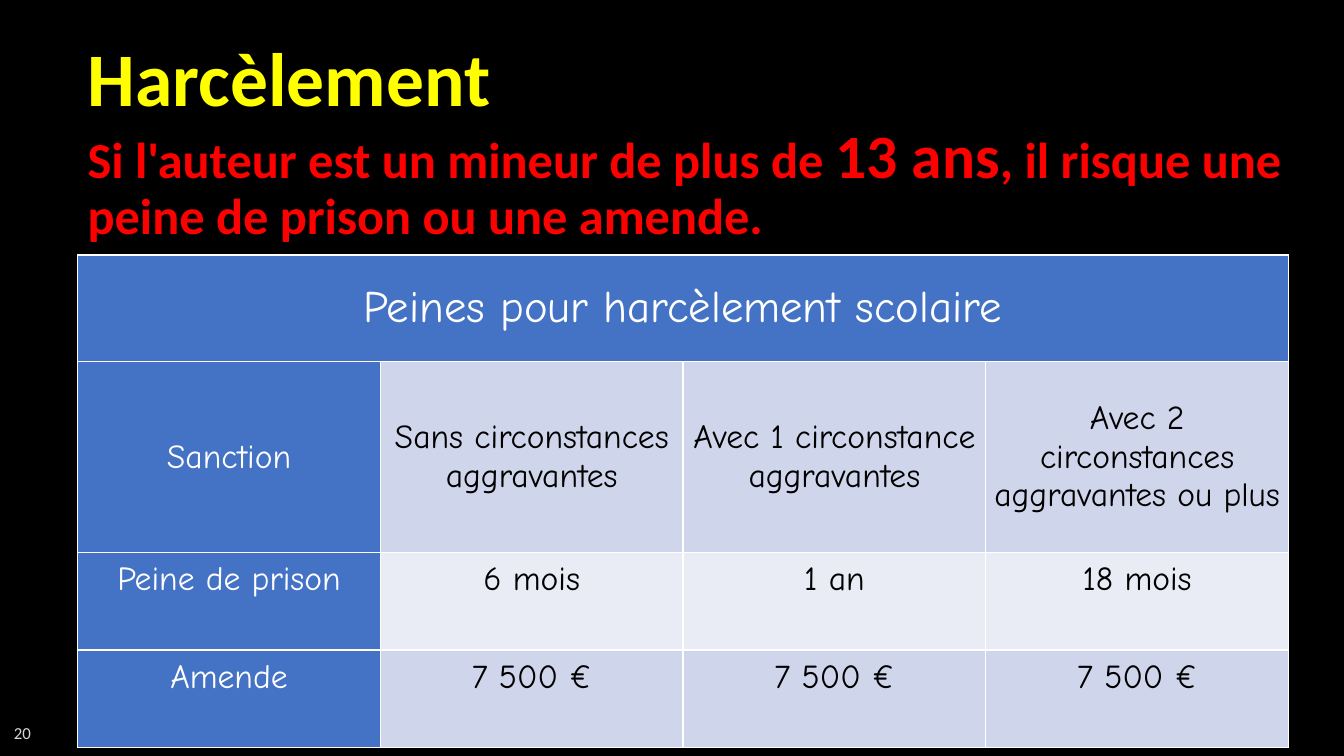
from lxml import etree
from pptx import Presentation
from pptx.dml.color import RGBColor
from pptx.enum.shapes import MSO_SHAPE
from pptx.enum.text import MSO_ANCHOR, PP_ALIGN
from pptx.oxml.ns import qn
from pptx.util import Inches, Pt

RECT = MSO_SHAPE.RECTANGLE
TOP, MIDDLE = MSO_ANCHOR.TOP, MSO_ANCHOR.MIDDLE
LEFT, CENTER, JUSTIFY = PP_ALIGN.LEFT, PP_ALIGN.CENTER, PP_ALIGN.JUSTIFY

TITLE = "Harcèlement"
RULE = [
    ("Si l'auteur est un mineur de plus de ", "rule"),
    ("13 ans", "age"),
    (", il risque une peine de prison ou une amende.", "rule"),
]
TABLE_TITLE = "Peines pour harcèlement scolaire"
PENALTIES = [
    ("Sanction", "Sans circonstances aggravantes", "Avec 1 circonstance aggravantes",
     "Avec 2 circonstances aggravantes ou plus"),
    ("Peine de prison", "6 mois", "1 an", "18 mois"),
    ("Amende", "7 500 €", "7 500 €", "7 500 €"),
]
PAGE = "20"


class Theme:
    background = "000000"
    header = "4472C4"
    bands = ("CFD5EA", "E9EBF5")
    border = "FFFFFF"
    styles = {
        "title": ("Calibri", 54, "FFFF00", True),
        "rule": ("Calibri", 36, "FF0000", True),
        "age": ("Calibri", 44, "FF0000", True),
        "table title": ("Comic Neue", 32, "FFFFFF", False),
        "head": ("Comic Neue", 24, "FFFFFF", False),
        "value": ("Comic Neue", 24, "000000", False),
        "page": ("Calibri", 12, "D9D9D9", False),
    }


LEFT_EDGE = 0.77
TABLE_TOP, TABLE_WIDTH = 2.53, 12.01
ROW_HEIGHTS = (1.06, 1.89, 0.97, 0.97)
CELL_MARGIN = 0.08


def place(left, top, width, height):
    return [Inches(v) for v in (left, top, width, height)]


def paint(fill, color):
    fill.solid()
    fill.fore_color.rgb = RGBColor.from_string(color)


def write(tf, runs, align=LEFT, anchor=TOP, line=1.0, after=0):
    tf.word_wrap = True
    tf.vertical_anchor = anchor
    p = tf.paragraphs[0]
    p.alignment = align
    p.line_spacing = line
    p.space_before = Pt(0)
    p.space_after = Pt(after)
    for text, style in runs:
        r = p.add_run()
        r.text = text
        r.font.name, size, color, r.font.bold = Theme.styles[style]
        r.font.size = Pt(size)
        r.font.color.rgb = RGBColor.from_string(color)


def add_borders(cell):
    tc_pr = cell._tc.get_or_add_tcPr()
    for i, side in enumerate(("lnL", "lnR", "lnT", "lnB")):
        ln = etree.Element(qn("a:" + side), w=str(Pt(1)))
        fill = etree.SubElement(ln, qn("a:solidFill"))
        etree.SubElement(fill, qn("a:srgbClr"), val=Theme.border)
        tc_pr.insert(i, ln)


def fill_cell(cell, text, style, color, anchor, after):
    cell.margin_left = cell.margin_right = Inches(CELL_MARGIN)
    cell.margin_top = cell.margin_bottom = Inches(CELL_MARGIN)
    write(cell.text_frame, [(text, style)], CENTER, after=after)
    cell.vertical_anchor = anchor
    paint(cell.fill, color)
    add_borders(cell)


def add_penalties(s):
    rows, cols = len(ROW_HEIGHTS), len(PENALTIES[0])
    frame = s.shapes.add_table(
        rows, cols, *place(LEFT_EDGE, TABLE_TOP, TABLE_WIDTH, sum(ROW_HEIGHTS)))
    table = frame.table
    for row, height in zip(table.rows, ROW_HEIGHTS):
        row.height = Inches(height)
    for col in table.columns:
        col.width = Inches(TABLE_WIDTH / cols)
    for c in range(cols):
        text = TABLE_TITLE if c == 0 else ""
        fill_cell(table.cell(0, c), text, "table title", Theme.header, MIDDLE, 24)
    table.cell(0, 0).merge(table.cell(0, cols - 1))
    for i, values in enumerate(PENALTIES):
        anchor = MIDDLE if i == 0 else TOP
        for c, text in enumerate(values):
            style, color = ("head", Theme.header) if c == 0 else ("value", Theme.bands[i % 2])
            fill_cell(table.cell(i + 1, c), text, style, color, anchor, 12)


def main():
    prs = Presentation()
    prs.slide_width, prs.slide_height = Inches(13.33), Inches(7.5)
    s = prs.slides.add_slide(prs.slide_layouts[5])
    paint(s.background.fill, Theme.background)

    title = s.shapes.title
    title.left, title.top, title.width, title.height = place(LEFT_EDGE, 0.36, 4.44, 0.91)
    write(title.text_frame, [(TITLE, "title")], JUSTIFY, MIDDLE, 0.9)

    rule = s.shapes.add_shape(RECT, *place(LEFT_EDGE, 1.19, 12.5, 1.25))
    rule.shadow.inherit = False
    paint(rule.fill, Theme.background)
    rule.line.fill.background()
    write(rule.text_frame, RULE, line=0.9)

    add_penalties(s)

    page = s.shapes.add_textbox(*place(0.04, 7.12, 0.53, 0.3))
    write(page.text_frame, [(PAGE, "page")])

    prs.save("out.pptx")


if __name__ == "__main__":
    main()
